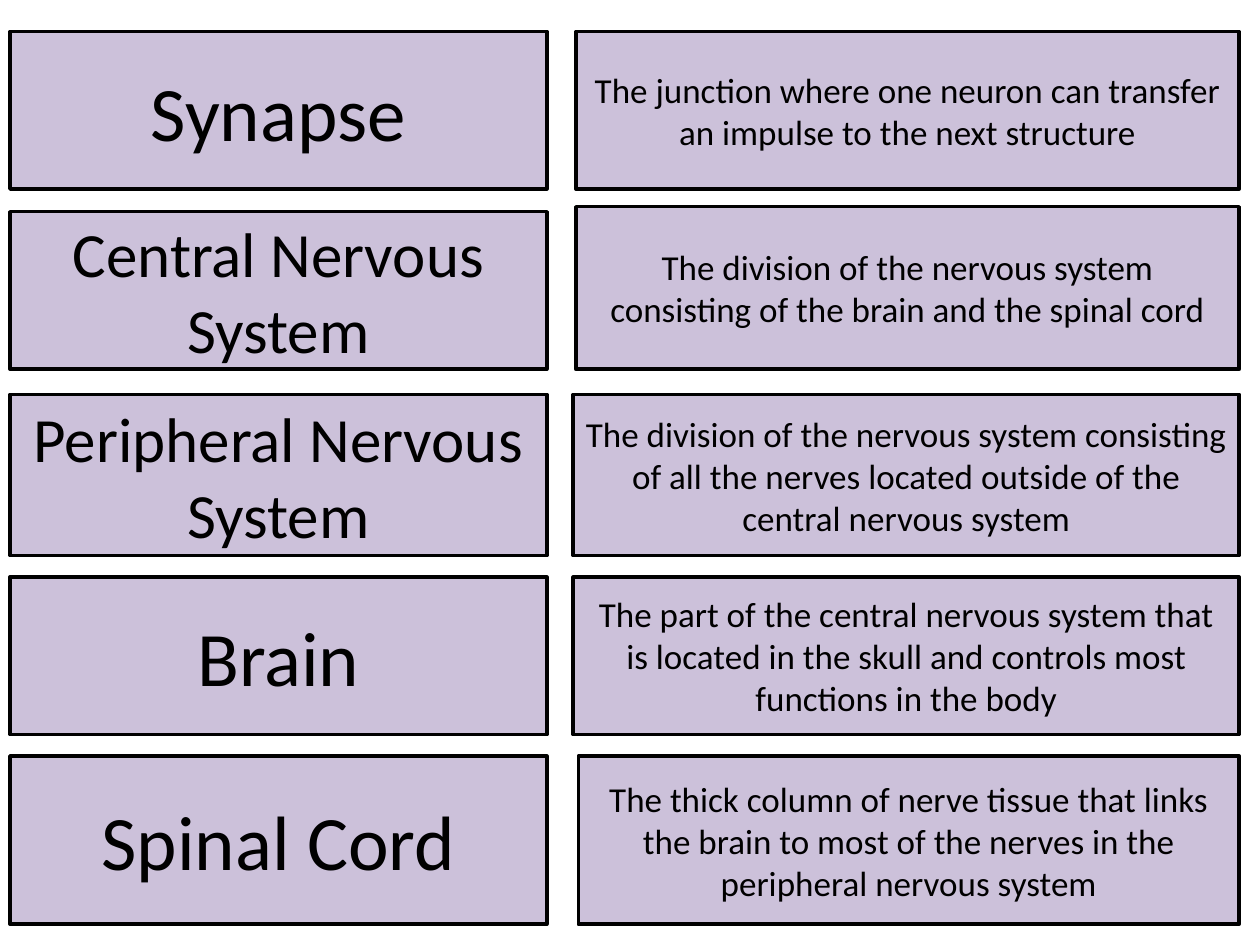
from dataclasses import dataclass

import pptx
import pptx.dml.color
import pptx.enum.shapes
import pptx.enum.text
import pptx.util

LILAC = pptx.dml.color.RGBColor(0xCC, 0xC1, 0xDA)
BLACK = pptx.dml.color.RGBColor(0x00, 0x00, 0x00)
FONT_NAME = "Calibri"

# Grid of 100 columns by 75 rows on a 10 by 7.5 inch slide
GRID_COLUMNS, GRID_ROWS = 100, 75
SLIDE_WIDTH = pptx.util.Inches(10)
SLIDE_HEIGHT = pptx.util.Inches(7.5)

TERM_LEFT, TERM_WIDTH = 0.8, 42.6
DEFINITION_RIGHT = 98.35
DEFINITION_SIZE = 20


@dataclass(frozen=True)
class Box:
    left: float
    top: float
    width: float
    height: float


@dataclass(frozen=True)
class Entry:
    term: str
    definition: str
    top: float
    height: float = 12.5
    term_size: int = 44
    definition_left: float = 45.7
    definition_rise: float = 0  # how far the definition starts above the term


ENTRIES = [
    Entry("Synapse",
          "The junction where one neuron can transfer an impulse to the next structure",
          top=2.5),
    Entry("Central Nervous System",
          "The division of the nervous system consisting of the brain and the spinal cord",
          top=16.8, term_size=36, definition_rise=0.4),
    Entry("Peripheral Nervous System",
          "The division of the nervous system consisting of all the nerves located "
          "outside of the central nervous system",
          top=31.3, height=12.8, term_size=36, definition_left=45.5),
    Entry("Brain",
          "The part of the central nervous system that is located in the skull "
          "and controls most functions in the body",
          top=45.8, definition_left=45.5),
    Entry("Spinal Cord",
          "The thick column of nerve tissue that links the brain to most of the nerves "
          "in the peripheral nervous system",
          top=60, height=13.35, definition_left=45.9),
]


def add_card(slide: pptx.slide.Slide, box: Box, text: str, size: int) -> None:
    """Draw one outlined lilac card with centred text."""
    shape = slide.shapes.add_shape(
        pptx.enum.shapes.MSO_SHAPE.FLOWCHART_PROCESS,
        round(box.left / GRID_COLUMNS * SLIDE_WIDTH),
        round(box.top / GRID_ROWS * SLIDE_HEIGHT),
        round(box.width / GRID_COLUMNS * SLIDE_WIDTH),
        round(box.height / GRID_ROWS * SLIDE_HEIGHT),
    )
    shape.shadow.inherit = False
    shape.fill.solid()
    shape.fill.fore_color.rgb = LILAC
    shape.line.color.rgb = BLACK
    shape.line.width = pptx.util.Pt(2)

    # Card text
    frame = shape.text_frame
    frame.word_wrap = True
    frame.vertical_anchor = pptx.enum.text.MSO_ANCHOR.MIDDLE
    paragraph = frame.paragraphs[0]
    paragraph.alignment = pptx.enum.text.PP_ALIGN.CENTER
    run = paragraph.add_run()
    run.text = text
    run.font.name = FONT_NAME
    run.font.size = pptx.util.Pt(size)
    run.font.color.rgb = BLACK


def add_entry(slide: pptx.slide.Slide, entry: Entry) -> None:
    """Draw a term card and the definition card beside it."""
    term_box = Box(TERM_LEFT, entry.top, TERM_WIDTH, entry.height)
    definition_box = Box(
        entry.definition_left,
        entry.top - entry.definition_rise,
        DEFINITION_RIGHT - entry.definition_left,
        entry.height + entry.definition_rise,
    )
    add_card(slide, term_box, entry.term, entry.term_size)
    add_card(slide, definition_box, entry.definition, DEFINITION_SIZE)


def main() -> None:
    presentation = pptx.Presentation()
    presentation.slide_width = SLIDE_WIDTH
    presentation.slide_height = SLIDE_HEIGHT

    # Blank layout: the slide has no title
    slide = presentation.slides.add_slide(presentation.slide_layouts[6])
    for entry in ENTRIES:
        add_entry(slide, entry)

    presentation.save("out.pptx")


if __name__ == "__main__":
    main()
